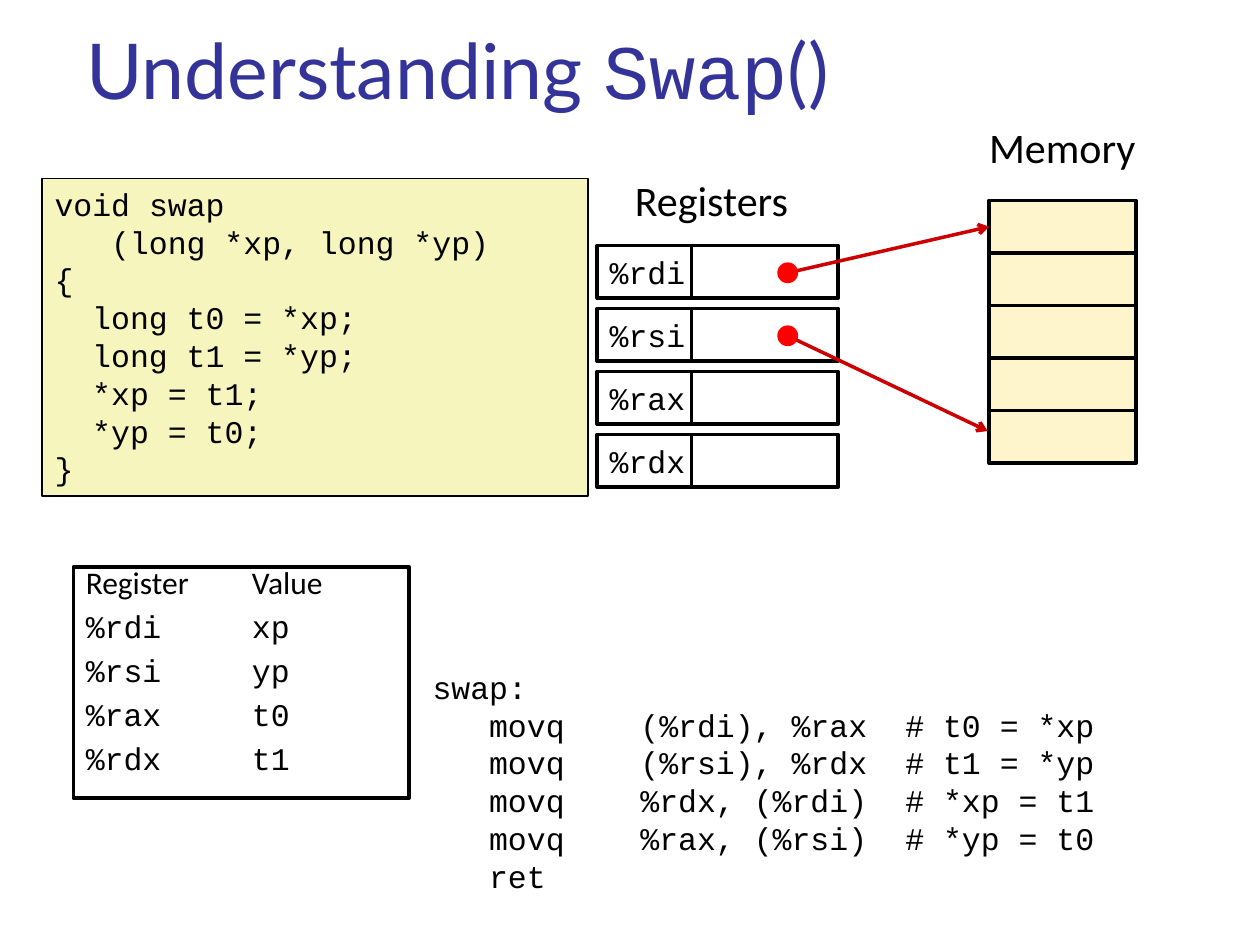
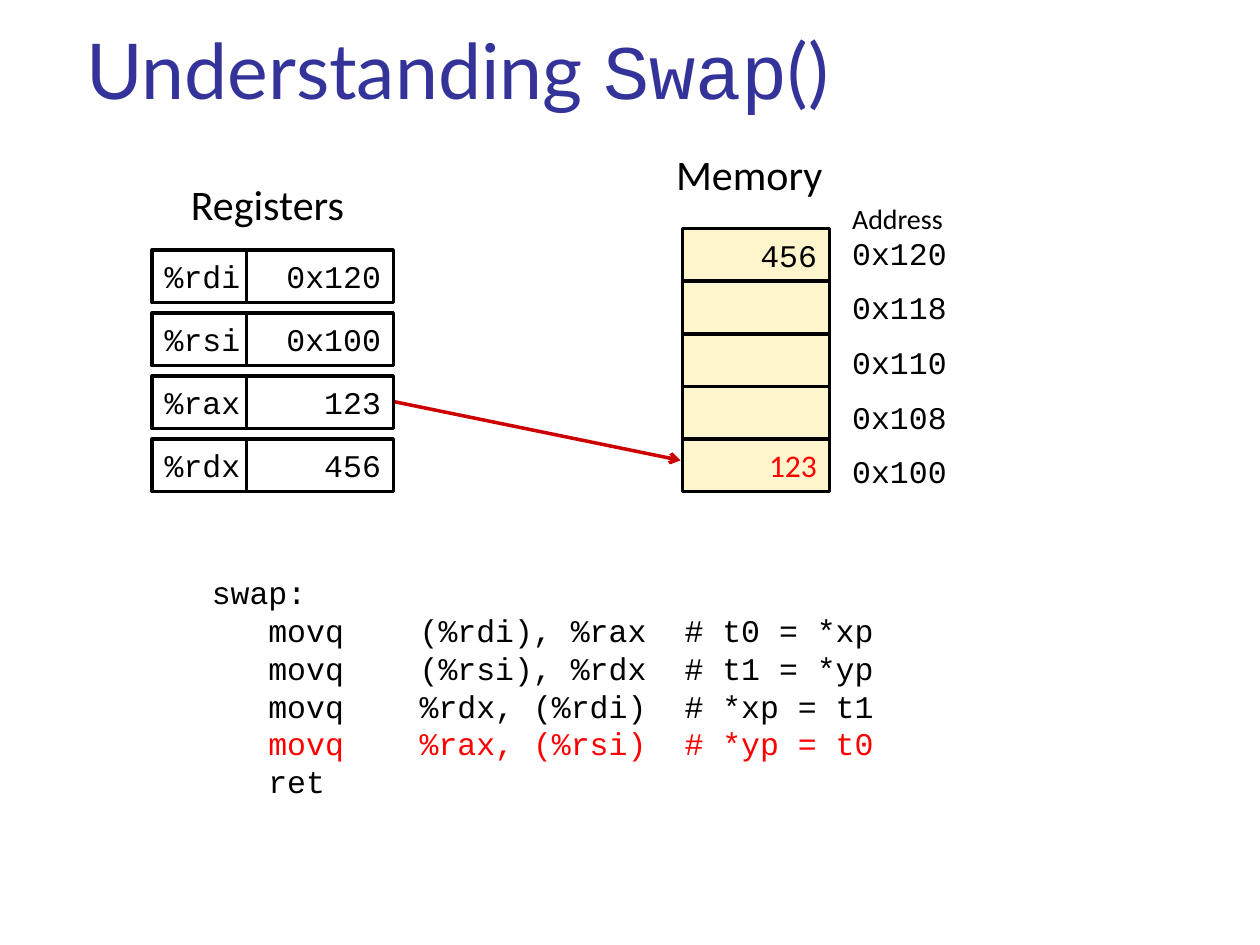
from lxml import etree
from pptx import Presentation
from pptx.dml.color import RGBColor
from pptx.enum.shapes import MSO_CONNECTOR, MSO_SHAPE
from pptx.enum.text import MSO_ANCHOR, MSO_AUTO_SIZE, PP_ALIGN
from pptx.oxml.ns import qn
from pptx.util import Cm, Pt

RECTANGLE, OVAL = MSO_SHAPE.RECTANGLE, MSO_SHAPE.OVAL
STRAIGHT = MSO_CONNECTOR.STRAIGHT
TOP, MIDDLE, BOTTOM = MSO_ANCHOR.TOP, MSO_ANCHOR.MIDDLE, MSO_ANCHOR.BOTTOM
LEFT, RIGHT = PP_ALIGN.LEFT, PP_ALIGN.RIGHT
FIXED, GROW = MSO_AUTO_SIZE.NONE, MSO_AUTO_SIZE.SHAPE_TO_FIT_TEXT

MONO, SANS, TITLE_FONT = "Courier New", "Calibri", "Lato"
BLACK, WHITE, BLUE, RED, ARROW_RED = "000000", "FFFFFF", "333399", "FF0000", "CC0000"
CODE_FILL, MEMORY_FILL = "F6F5BD", "FFF5CC"
NAME_WIDTH, VALUE_WIDTH, CELL_HEIGHT, REGISTER_STEP = 1.9, 2.96, 1.06, 1.27
DOT = 0.42

REGISTERS = ["%rdi", "%rsi", "%rax", "%rdx"]
ADDRESSES = ["0x120", "0x118", "0x110", "0x108", "0x100"]
TITLE = [[("Understanding ", {}), ("Swap", {"font": MONO}), ("()", {})]]
SWAP_CODE = [
    "void swap",
    "\t\t(long *xp, long *yp)",
    "{",
    "\tlong t0 = *xp;",
    "\tlong t1 = *yp;",
    "\t*xp = t1;",
    "\t*yp = t0;",
    "}",
]
ASSEMBLY = [
    "swap:",
    "\tmovq\t(%rdi), %rax\t# t0 = *xp",
    "\tmovq\t(%rsi), %rdx\t# t1 = *yp",
    "\tmovq\t%rdx, (%rdi)\t# *xp = t1",
    "\tmovq\t%rax, (%rsi)\t# *yp = t0",
    "\tret",
]
STORE_LINE = 4
VALUE_TABLE = [[("Register\tValue", {"font": SANS})],
               "%rdi\txp", "%rsi\typ", "%rax\tt0", "%rdx\tt1"]

CODE_STYLE = {"tabs": (0.76, 1.14), "fit": GROW}
ASSEMBLY_STYLE = {"tabs": (1.14, 4.19, 9.53), "fit": GROW}
TABLE_STYLE = {"tabs": (3.35,), "line_spacing": 0.7, "space_before": 10}
HEADING_STYLE = {"font": SANS, "size": 24, "wrap": False, "fit": GROW}
CELL_STYLE = {"anchor": MIDDLE, "wrap": False}


def color(value):
    return RGBColor.from_string(value)


def write(frame, lines, font=MONO, size=18, ink=BLACK, align=LEFT, anchor=TOP,
          wrap=True, fit=FIXED, tabs=(), line_spacing=None, space_before=None):
    frame.word_wrap, frame.auto_size, frame.vertical_anchor = wrap, fit, anchor
    for index, line in enumerate(lines):
        para = frame.add_paragraph() if index else frame.paragraphs[0]
        para.alignment = align
        if line_spacing:
            para.line_spacing = line_spacing
        if space_before:
            para.space_before = Pt(space_before)
        if tabs:
            stops = etree.SubElement(para._p.get_or_add_pPr(), qn("a:tabLst"))
            for stop in tabs:
                etree.SubElement(stops, qn("a:tab"), pos=str(Cm(stop)), algn="l")
        for text, override in [(line, {})] if isinstance(line, str) else line:
            span = para.add_run()
            span.text = text
            span.font.name = override.get("font", font)
            span.font.size = Pt(size)
            span.font.color.rgb = color(override.get("ink", ink))


highlighted = list(ASSEMBLY)
highlighted[STORE_LINE] = [(ASSEMBLY[STORE_LINE], {"ink": RED})]

slides = [
    {
        "registers": (12.04, 4.95, [""] * 4),
        "memory": (19.94, 4.04, [""] * 5),
        "panels": [
            (0.85, 3.6, 11, 6.4, CODE_FILL, 1, SWAP_CODE, CODE_STYLE),
            (1.48, 11.43, 6.77, 4.66, None, 2, VALUE_TABLE, TABLE_STYLE),
        ],
        "labels": [
            (12.55, 3.39, 3.76, 1.27, ["Registers"], HEADING_STYLE),
            (19.69, 2.32, 3.55, 1.27, ["Memory"], HEADING_STYLE),
            (8.47, 13.34, 16.3, 4.87, ASSEMBLY, ASSEMBLY_STYLE),
        ],
        "arrows": [(15.88, 5.5, 19.94, 4.57), (15.88, 6.77, 19.91, 8.69)],
        "dots": True,
    },
    {
        "registers": (3.07, 5.04, ["0x120", "0x100", "123", "456"]),
        "memory": (13.76, 4.61, ["456", "", "", "", [("123", {"font": SANS, "ink": RED})]]),
        "panels": [],
        "labels": [
            (3.6, 3.48, 3.76, 1.27, ["Registers"], HEADING_STYLE),
            (13.38, 2.87, 3.55, 1.27, ["Memory"], HEADING_STYLE),
            (4.02, 11.43, 16.3, 4.87, highlighted, ASSEMBLY_STYLE),
            (16.93, 3.93, 3.39, 0.94, ["Address"], {"font": SANS, "size": 16, "fit": GROW}),
        ] + [
            (16.93, 4.59 + 1.1 * row, 3.39, 1.02, [address], {"fit": GROW})
            for row, address in enumerate(ADDRESSES)
        ],
        "arrows": [(7.96, 8.1, 13.72, 9.28)],
        "dots": False,
    },
]

deck = Presentation()
deck.slide_width, deck.slide_height = Cm(25.4), Cm(19.05)

for content in slides:
    page = deck.slides.add_slide(deck.slide_layouts[5])
    title = page.shapes.title
    title.left, title.top, title.width, title.height = Cm(1.48), Cm(0.85), Cm(17.7), Cm(1.6)
    write(title.text_frame, TITLE, font=TITLE_FONT, size=44, ink=BLUE, anchor=BOTTOM)

    boxes = list(content["panels"])
    left, top, values = content["registers"]
    for row, (name, value) in enumerate(zip(REGISTERS, values)):
        y = top + row * REGISTER_STEP
        boxes.append((left, y, NAME_WIDTH, CELL_HEIGHT, WHITE, 2, [name], CELL_STYLE))
        boxes.append((left + NAME_WIDTH, y, VALUE_WIDTH, CELL_HEIGHT, WHITE, 2,
                      [value], {**CELL_STYLE, "align": RIGHT}))
    left, top, values = content["memory"]
    for row, value in enumerate(values):
        boxes.append((left, top + row * CELL_HEIGHT, VALUE_WIDTH, CELL_HEIGHT, MEMORY_FILL, 2,
                      [value], {**CELL_STYLE, "align": RIGHT}))

    for left, top, width, height, fill, line_width, lines, style in boxes:
        box = page.shapes.add_shape(RECTANGLE, Cm(left), Cm(top), Cm(width), Cm(height))
        box.shadow.inherit = False
        if fill:
            box.fill.solid()
            box.fill.fore_color.rgb = color(fill)
        else:
            box.fill.background()
        box.line.color.rgb = color(BLACK)
        box.line.width = Pt(line_width)
        if any(lines):
            write(box.text_frame, lines, **style)

    for left, top, width, height, lines, style in content["labels"]:
        label = page.shapes.add_textbox(Cm(left), Cm(top), Cm(width), Cm(height))
        write(label.text_frame, lines, **style)

    for start_x, start_y, end_x, end_y in content["arrows"]:
        arrow = page.shapes.add_connector(STRAIGHT, Cm(start_x), Cm(start_y), Cm(end_x), Cm(end_y))
        arrow.line.color.rgb = color(ARROW_RED)
        arrow.line.width = Pt(2)
        etree.SubElement(arrow.line._get_or_add_ln(), qn("a:tailEnd"), type="arrow")
        etree.SubElement(arrow._element.spPr, qn("a:effectLst"))
        if content["dots"]:
            dot = page.shapes.add_shape(OVAL, Cm(start_x - DOT / 2), Cm(start_y - DOT / 2),
                                        Cm(DOT), Cm(DOT))
            dot.shadow.inherit = False
            dot.fill.solid()
            dot.fill.fore_color.rgb = color(RED)
            dot.line.fill.background()

deck.save("out.pptx")
